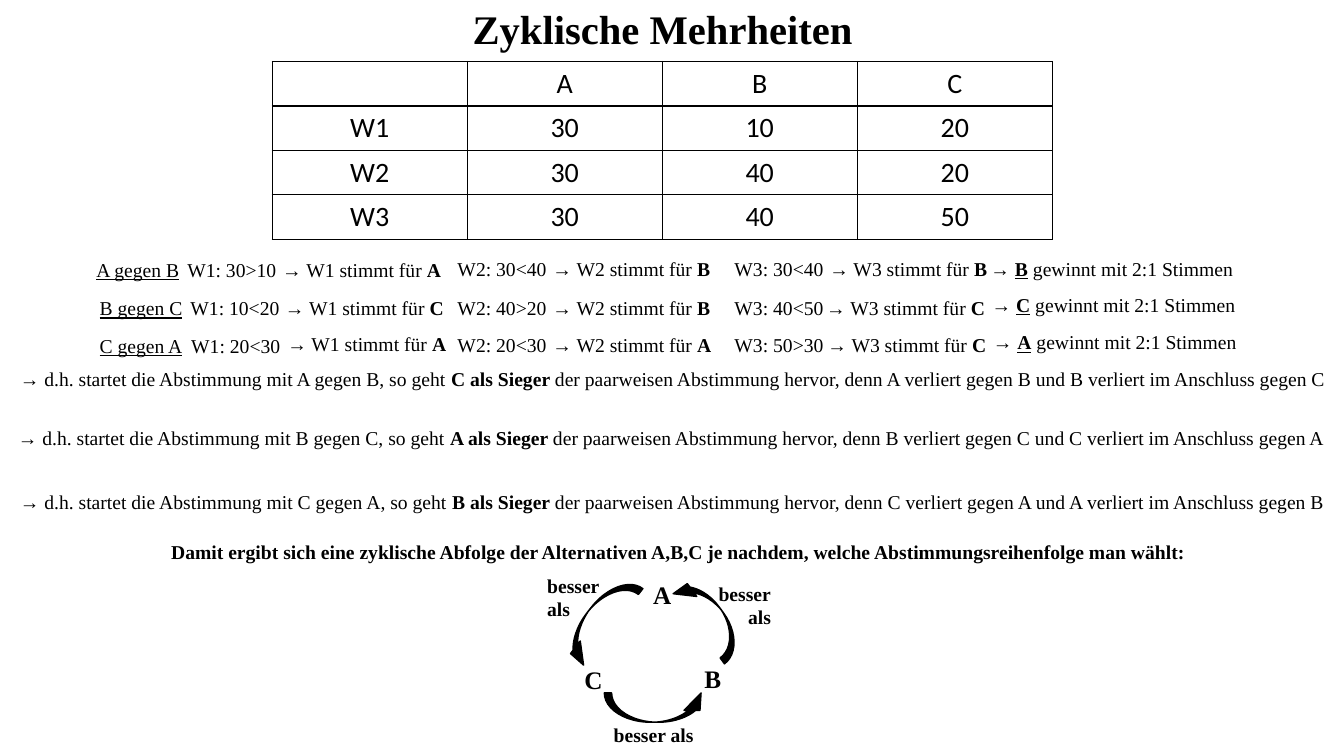
import pptx
import pptx.util
import pptx.dml.color
import pptx.enum.shapes
import pptx.enum.text
import pptx.oxml
import pptx.oxml.ns

Cm, Pt = pptx.util.Cm, pptx.util.Pt
ALIGN = pptx.enum.text.PP_ALIGN
SERIF, SANS, BLACK = "Times New Roman", "Calibri", "000000"

# Content
TITLE = "Zyklische Mehrheiten"
OPTIONS = ("A", "B", "C")
POINTS = {"W1": (30, 10, 20), "W2": (30, 40, 20), "W3": (30, 40, 50)}
SUMMARY = ("Damit ergibt sich eine zyklische Abfolge der Alternativen A,B,C "
           "je nachdem, welche Abstimmungsreihenfolge man wählt:")

# Columns of the duels: lefts and tops by duel, width (cm)
HIGH, LOW = (6.35, 7.32, 8.27), (6.38, 7.34, 8.28)
DUEL_COLUMNS = [
    ((2.18, 2.26, 2.26), LOW, 2.84),
    ((4.47, 4.55, 4.57), LOW, 2.95),
    ((6.86, 6.93, 6.99), (6.38, 7.34, 8.23), 4.62),
    ((11.28,) * 3, HIGH, 2.95),
    ((13.67,) * 3, HIGH, 4.62),
    ((18.26,) * 3, HIGH, 2.95),
    ((20.65, 20.57, 20.6), HIGH, 4.62),
    ((24.71, 24.74, 24.77), (6.35, 7.26, 8.2), 6.71),
]
CONCLUSION_PLACES = [(0.25, 9.12), (0.2, 10.62), (0.25, 12.22)]

# Cycle: left, top, width, height (cm), then rotation or text details
ARROWS = [
    (14.73, 14.33, 0.74, 2.64, 37.8),
    (16.18, 16.51, 0.74, 2.64, 270),
    (17.48, 14.35, 0.74, 2.39, 143.8),
]
CYCLE_LABELS = [
    (16.21, 14.48, 0.97, 1.02, ["A"], 18, ALIGN.LEFT),
    (14.48, 16.61, 0.97, 1.02, ["C"], 18, ALIGN.LEFT),
    (17.5, 16.59, 0.94, 1.02, ["B"], 18, ALIGN.LEFT),
    (13.54, 14.33, 1.85, 1.45, ["besser", "als"], 14, ALIGN.LEFT),
    (17.83, 14.53, 1.85, 1.45, ["besser", "als"], 14, ALIGN.RIGHT),
    (15.19, 18.08, 2.54, 0.86, ["besser als"], 14, ALIGN.RIGHT),
]


def color(value):
    return pptx.dml.color.RGBColor.from_string(value)


def style(font, size, name=SERIF, bold=None):
    font.size, font.name, font.bold = Pt(size), name, bold
    font.color.rgb = color(BLACK)


def add_text(place, lines, size=14, align=ALIGN.LEFT, bold=None, wrap=True):
    """Each line is a list of (text, marks); marks may hold b and u."""
    box = page.shapes.add_textbox(*map(Cm, place))
    frame = box.text_frame
    frame.word_wrap = wrap
    if not wrap:
        frame.auto_size = pptx.enum.text.MSO_AUTO_SIZE.SHAPE_TO_FIT_TEXT
    for index, line in enumerate(lines):
        para = frame.add_paragraph() if index else frame.paragraphs[0]
        para.alignment = align
        style(para.font, size, bold=bold)
        for text, marks in line:
            span = para.add_run()
            span.text = text
            style(span.font, size, bold="b" in marks or bold)
            span.font.underline = "u" in marks or None


def add_borders(cell):
    properties = cell._tc.get_or_add_tcPr()
    for index, side in enumerate(("lnL", "lnR", "lnT", "lnB")):
        properties.insert(index, pptx.oxml.parse_xml(
            f'<a:{side} {pptx.oxml.ns.nsdecls("a")} w="12700"><a:solidFill>'
            f'<a:srgbClr val="{BLACK}"/></a:solidFill></a:{side}>'))


deck = pptx.Presentation()
deck.slide_width, deck.slide_height = Cm(33.87), Cm(19.05)
page = deck.slides.add_slide(deck.slide_layouts[5])

# Title
title = page.shapes.title
title.left, title.top, title.width, title.height = map(Cm, (6.15, 0.05, 21.11, 1.3))
title.text_frame.text = TITLE
title.text_frame.auto_size = pptx.enum.text.MSO_AUTO_SIZE.NONE
title.text_frame.vertical_anchor = pptx.enum.text.MSO_ANCHOR.MIDDLE
title.text_frame.paragraphs[0].alignment = ALIGN.CENTER
style(title.text_frame.paragraphs[0].font, 29, bold=True)

# Table of points
rows = [("", *OPTIONS)] + [(voter, *points) for voter, points in POINTS.items()]
table = page.shapes.add_table(4, 4, Cm(6.86), Cm(1.55), Cm(19.66), Cm(4.4)).table
table.first_row = table.horz_banding = False
for row, values in enumerate(rows):
    for column, value in enumerate(values):
        cell = table.cell(row, column)
        cell.text = str(value)
        cell.fill.background()
        add_borders(cell)
        para = cell.text_frame.paragraphs[0]
        para.alignment = ALIGN.CENTER
        style(para.font, 20, SANS)

# Duels and what follows from each
for duel in range(3):
    one, two, three = ((duel + step) % 3 for step in range(3))
    first, second, third = OPTIONS[one], OPTIONS[two], OPTIONS[three]
    parts, votes = [[(f"{first} gegen {second}", "u")]], []
    for voter, points in POINTS.items():
        ahead = points[one] > points[two]
        votes.append(first if ahead else second)
        sign = ">" if ahead else "<"
        parts.append([(f"{voter}: {points[one]}{sign}{points[two]}", "")])
        parts.append([(f"→ {voter} stimmt für ", ""), (votes[-1], "b")])
    winner = max(votes, key=votes.count)
    parts.append([("→ ", ""), (winner, "bu"), (" gewinnt mit 2:1 Stimmen", "")])
    for line, (lefts, tops, width) in zip(parts, DUEL_COLUMNS):
        add_text((lefts[duel], tops[duel], width, 0.89), [line])

    add_text((*CONCLUSION_PLACES[duel], 33.55, 0.89), [[
        (f"→ d.h. startet die Abstimmung mit {first} gegen {second}, so geht ", ""),
        (f"{third} als Sieger ", "b"),
        (f"der paarweisen Abstimmung hervor, denn {first} verliert gegen {second} "
         f"und {second} verliert im Anschluss gegen {third}", "")]])

add_text((0.33, 13.49, 33.55, 0.89), [[(SUMMARY, "")]], align=ALIGN.CENTER, bold=True)

# Cycle of the options
for *place, rotation in ARROWS:
    arrow = page.shapes.add_shape(
        pptx.enum.shapes.MSO_SHAPE.CURVED_RIGHT_ARROW, *map(Cm, place))
    for index, value in enumerate((0.25, 0.543, 0.593)):
        arrow.adjustments[index] = value
    arrow.rotation = rotation
    arrow.shadow.inherit = False
    arrow.fill.solid()
    arrow.fill.fore_color.rgb = arrow.line.color.rgb = color(BLACK)
    arrow.line.width = Pt(1)
for *place, words, size, align in CYCLE_LABELS:
    add_text(place, [[(word, "")] for word in words], size, align, True, wrap=False)

deck.save("out.pptx")
